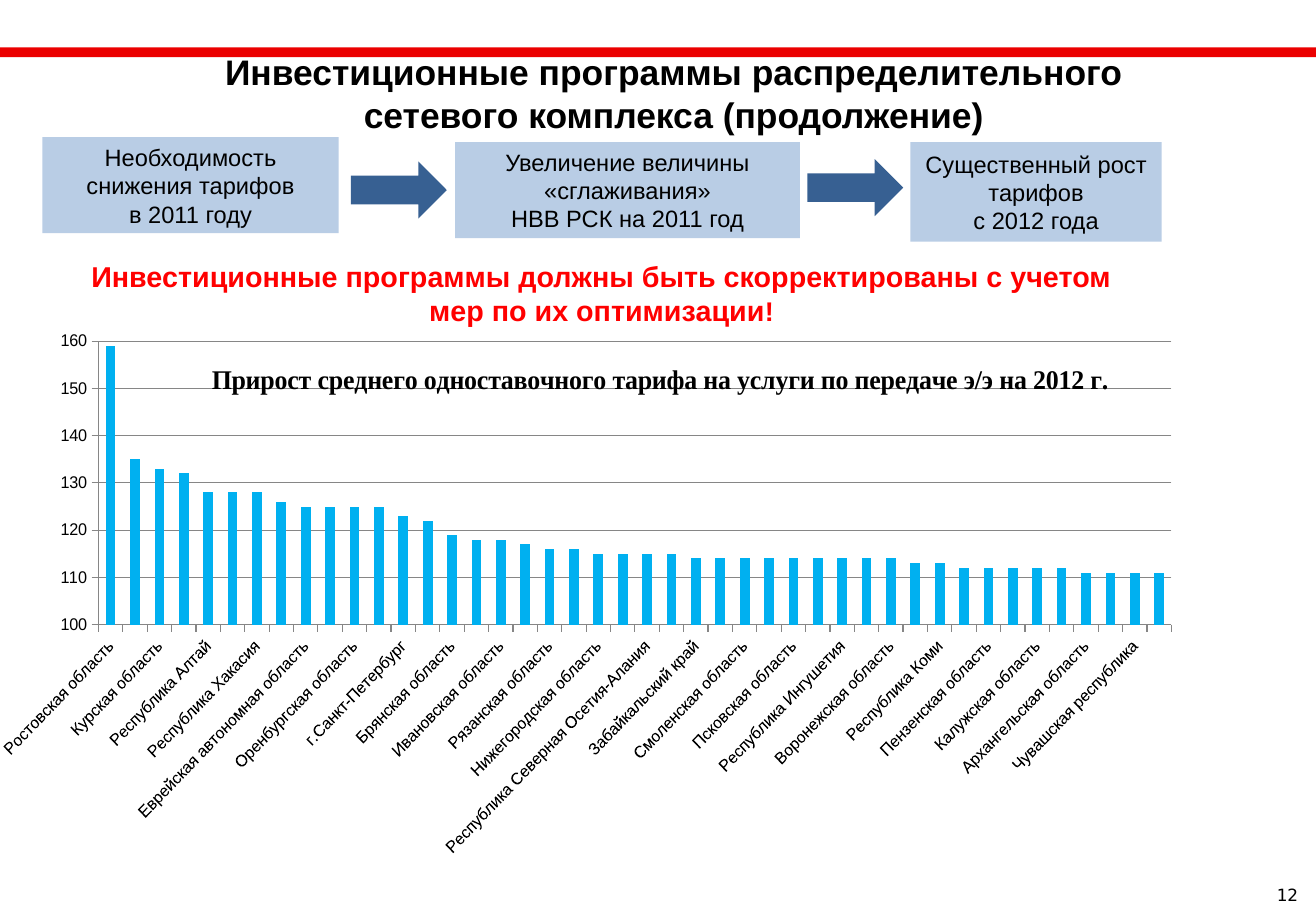
from lxml import etree
from pptx import Presentation
from pptx import util as u
from pptx.chart import data as cd
from pptx.dml import color as col
from pptx.enum import chart as ch, shapes as sh, text as tx
from pptx.oxml import ns

PX = 9144  # 100 px to the inch
WIDE, HIGH = 1084, 750

STEPS = [
    ((35, 113, 244, 79), ["Необходимость снижения тарифов", "в 2011 году"]),
    ((375, 117, 284, 79), ["Увеличение величины «сглаживания»", "НВВ РСК на 2011 год"]),
    ((750, 117, 207, 82), ["Существенный рост тарифов", "с 2012 года"]),
]
ARROWS = [(289, 133, 79, 47), (665, 131, 79, 47)]

RATES = [
    ("Ростовская область", 159), ("Ульяновская область", 135),
    ("Курская область", 133), ("Удмуртская республика", 132),
    ("Республика Алтай", 128), ("Владимирская область", 128),
    ("Республика Хакасия", 128), ("г.Москва", 126),
    ("Еврейская автономная область", 125), ("Тамбовская область", 125),
    ("Оренбургская область", 125), ("Ярославская область", 125),
    ("г.Санкт-Петербург", 123), ("Орловская область", 122),
    ("Брянская область", 119), ("Челябинская область", 118),
    ("Ивановская область", 118), ("Ленинградская область", 117),
    ("Рязанская область", 116), ("Алтайский край", 116),
    ("Нижегородская область", 115), ("Курганская область", 115),
    ("Республика Северная Осетия-Алания", 115), ("Костромская область", 115),
    ("Забайкальский край", 114), ("Тюменская область", 114),
    ("Смоленская область", 114), ("Московская область", 114),
    ("Псковская область", 114), ("Республика Марий Эл", 114),
    ("Республика Ингушетия", 114), ("Саратовская область", 114),
    ("Воронежская область", 114), ("Карачаево-Черкесская республика", 113),
    ("Республика Коми", 113), ("Республика Тыва", 112),
    ("Пензенская область", 112), ("Республика Калмыкия", 112),
    ("Калужская область", 112), ("Краснодарский край, Республика Адыгея", 112),
    ("Архангельская область", 111), ("Свердловская область", 111),
    ("Чувашская республика", 111), ("Кировская область", 111),
]


def emu(box):
    return [n * PX for n in box]


def rgb(code):
    return col.RGBColor.from_string(code)


def style(font, size, color="000000", name="Arial", bold=False):
    for key, val in {"size": u.Pt(size), "name": name, "bold": bold}.items():
        setattr(font, key, val)
    font.color.rgb = rgb(color)


def write(shape, lines, pad, anchor=tx.MSO_ANCHOR.MIDDLE, **look):
    frame = shape.text_frame
    form = {"word_wrap": True, "vertical_anchor": anchor,
            "margin_left": pad[0] * PX, "margin_right": pad[0] * PX,
            "margin_top": pad[1] * PX, "margin_bottom": pad[1] * PX}
    for key, val in form.items():
        setattr(frame, key, val)
    for i, line in enumerate(lines):
        para = frame.add_paragraph() if i else frame.paragraphs[0]
        para.alignment = tx.PP_ALIGN.CENTER
        para.text = line
        for run in para.runs:
            style(run.font, **look)
    return frame


def block(slide, box, fill, kind=sh.MSO_SHAPE.RECTANGLE):
    shape = slide.shapes.add_shape(kind, *emu(box))
    shape.shadow.inherit = False
    shape.fill.solid()
    shape.fill.fore_color.rgb = rgb(fill)
    shape.line.fill.background()
    return shape


def label(slide, box, lines, pad=(10, 5), **look):
    write(slide.shapes.add_textbox(*emu(box)), lines, pad, **look)


def header(slide, box):
    left, top, wide, high = box
    block(slide, (left, top + 3, wide, 8), "EB0000")
    label(slide, (left + 122, top, 866, high),
          ["Инвестиционные программы распределительного сетевого комплекса (продолжение)"],
          size=21, bold=True)


def flow(slide):
    for box, lines in STEPS:
        write(block(slide, box, "B9CDE5"), lines, (8, 4), size=14)
    for box in ARROWS:
        block(slide, box, "376092", sh.MSO_SHAPE.RIGHT_ARROW)


def place(parent, after, inner=False, **spots):
    """Give a chart part a manual layout after the named sibling."""
    for old in parent.findall(ns.qn("c:layout")):
        parent.remove(old)
    lay = etree.Element(ns.qn("c:layout"))
    man = etree.SubElement(lay, ns.qn("c:manualLayout"))
    if inner:
        etree.SubElement(man, ns.qn("c:layoutTarget"), val="inner")
    for key in ("x", "y"):
        etree.SubElement(man, ns.qn(f"c:{key}Mode"), val="edge")
    for key, val in spots.items():
        etree.SubElement(man, ns.qn(f"c:{key}"), val=str(val))
    if after is None:
        parent.insert(0, lay)
    else:
        after.addnext(lay)


def graph(slide, box):
    data = cd.CategoryChartData(number_format="#,##0")
    data.categories = [name for name, _ in RATES]
    data.add_series("Прирост тарифа", [val for _, val in RATES])
    chart = slide.shapes.add_chart(
        ch.XL_CHART_TYPE.COLUMN_CLUSTERED, *emu(box), data).chart
    style(chart.font, 10)
    chart.has_legend = False

    # Title over the plot
    chart.has_title = True
    frame = chart.chart_title.text_frame
    frame.text = "Прирост среднего одноставочного тарифа на услуги по передаче э/э на 2012 г."
    style(frame.paragraphs[0].runs[0].font, 16, name="Times New Roman", bold=True)
    title = chart.chart_title._element
    chart.chart_title.include_in_layout = True
    place(title, title.find(ns.qn("c:tx")), x=0.14, y=0.06)
    for over in title.findall(ns.qn("c:overlay")):
        over.set("val", "1")

    # Columns
    plot = chart.plots[0]
    plot.gap_width = 150
    plot.vary_by_categories = False
    fill = plot.series[0].format.fill
    fill.solid()
    fill.fore_color.rgb = rgb("00B0F0")
    area = plot._element.getparent()
    place(area, None, inner=True, x=0.045, y=0.033, w=0.939, h=0.481)

    # Axes
    rows, cats = chart.value_axis, chart.category_axis
    for key, val in {"minimum_scale": 100, "maximum_scale": 160,
                     "major_unit": 10, "has_major_gridlines": True}.items():
        setattr(rows, key, val)
    rows.tick_labels.number_format = "#,##0"
    rows.tick_labels.number_format_is_linked = False
    for axis in (rows, cats):
        axis.major_tick_mark = ch.XL_TICK_MARK.OUTSIDE
        style(axis.tick_labels.font, 10)
    for line in (rows.format.line, cats.format.line, rows.major_gridlines.format.line):
        line.color.rgb = rgb("868686")
        line.width = u.Pt(0.75)
    body = cats._element.find(ns.qn("c:txPr")).find(ns.qn("a:bodyPr"))
    body.set("rot", "-2700000")
    body.set("vert", "horz")


def banner(slide, box):
    frame = write(block(slide, box, "FFFFFF"),
                  ["Инвестиционные программы должны быть скорректированы с учетом\v"
                   "мер по их оптимизации"],
                  (10, 5), size=17, color="FF0000", bold=True)
    mark = frame.paragraphs[0].add_run()
    mark.text = "!"
    style(mark.font, 16, "FF0000", bold=True)


def main():
    deck = Presentation()
    deck.slide_width, deck.slide_height = emu((WIDE, HIGH))
    slide = deck.slides.add_slide(deck.slide_layouts[6])
    header(slide, (0, 36, WIDE, 81))
    graph(slide, (0, 265, 980, 485))
    flow(slide)
    banner(slide, (35, 207, 921, 68))
    # Page number
    label(slide, (1038, 723, 45, 27), ["12"], anchor=tx.MSO_ANCHOR.TOP,
          size=10, name="DejaVu Sans")
    deck.save("out.pptx")


if __name__ == "__main__":
    main()
